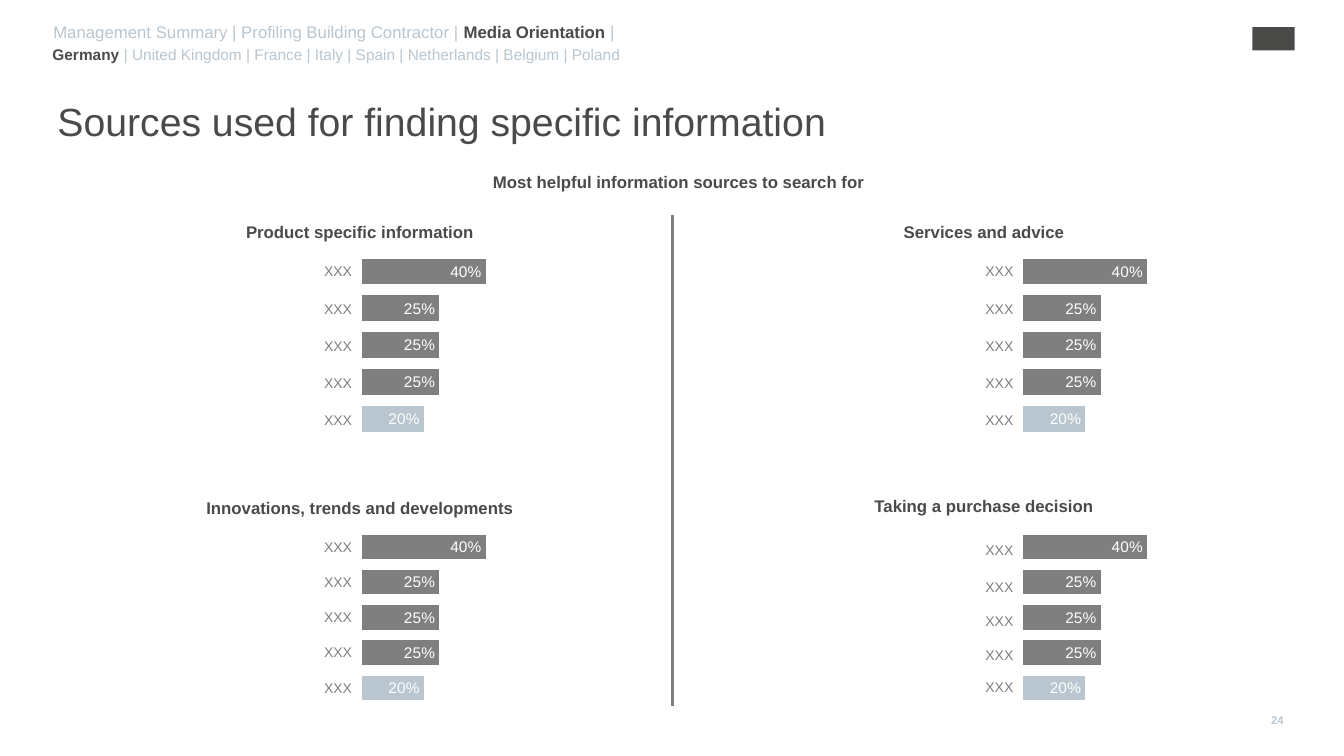
from lxml import etree
from pptx import Presentation
from pptx.chart.data import CategoryChartData
from pptx.dml.color import RGBColor
from pptx.enum.chart import XL_CHART_TYPE as CT, XL_LABEL_POSITION as LabelPos
from pptx.enum.shapes import MSO_CONNECTOR as Conn, MSO_SHAPE as Shape
from pptx.enum.text import MSO_ANCHOR as Anchor, MSO_AUTO_SIZE as AutoSize, PP_ALIGN as Align
from pptx.oxml.ns import qn
from pptx.util import Inches, Pt

DARK = RGBColor(0x4A, 0x4A, 0x49)
GREY = RGBColor(0x7F, 0x7F, 0x7F)
PALE = RGBColor(0xB9, 0xC6, 0xCF)
WHITE = RGBColor(0xFF, 0xFF, 0xFF)

FONT = "Arial"
SHARES = [0.4, 0.25, 0.25, 0.25, 0.2]
BAR_COLORS = [GREY] * 4 + [PALE]
LABEL_GAP = 0.09  # between the label column and the bars

HEADING = dict(size=Pt(12), bold=True, color=DARK)
LABEL = dict(size=Pt(10), color=GREY)
BAR_VALUE = dict(size=Pt(11), color=WHITE)


def format_font(font, color, **values):
    font.name = FONT
    font.color.rgb = color
    for name, value in values.items():
        setattr(font, name, value)


def fill_text(tf, runs, align=Align.LEFT, spacing=None, anchor=Anchor.TOP, margins=(0, 0, 0, 0)):
    """Write one paragraph of (text, format) runs into a text frame."""
    tf.word_wrap = True
    tf.auto_size = AutoSize.NONE
    tf.vertical_anchor = anchor
    for side, margin in zip(("left", "top", "right", "bottom"), margins):
        setattr(tf, f"margin_{side}", Inches(margin))
    p = tf.paragraphs[0]
    p.alignment = align
    p.line_spacing = spacing
    for text, style in runs:
        r = p.add_run()
        r.text = text
        format_font(r.font, **style)


def add_text(slide, box, runs, **layout):
    sp = slide.shapes.add_textbox(*map(Inches, box))
    fill_text(sp.text_frame, runs, **layout)


def add_labels(slide, x, y, w, row_heights):
    """Right-aligned label column, one row per bar."""
    frame = slide.shapes.add_table(len(row_heights), 1, *map(Inches, (x, y, w, sum(row_heights))))
    table = frame.table
    table.first_row = table.horz_banding = False
    for row, height in zip(table.rows, row_heights):
        row.height = Inches(height)
        cell = row.cells[0]
        cell.fill.background()
        cell.vertical_anchor = Anchor.MIDDLE
        cell.margin_left = cell.margin_top = cell.margin_right = Inches(0.01)
        cell.margin_bottom = 0
        p = cell.text_frame.paragraphs[0]
        p.alignment = Align.RIGHT
        r = p.add_run()
        r.text = "XXX"
        format_font(r.font, **LABEL)


def fill_plot_area(chart):
    """Stretch the plot over the whole chart frame."""
    plot_area = chart._chartSpace.chart.plotArea
    for old in plot_area.findall(qn("c:layout")):
        plot_area.remove(old)
    layout = etree.Element(qn("c:layout"))
    manual = etree.SubElement(layout, qn("c:manualLayout"))
    for tag, value in (("layoutTarget", "inner"), ("xMode", "edge"), ("yMode", "edge"),
                       ("x", "0"), ("y", "0"), ("w", "1"), ("h", "1")):
        etree.SubElement(manual, qn(f"c:{tag}")).set("val", value)
    plot_area.insert(0, layout)


def add_bars(slide, x, y, w, h):
    data = CategoryChartData(number_format="0%")
    data.categories = [str(i + 1) for i in range(len(SHARES))]
    data.add_series("Series 1", SHARES)
    chart = slide.shapes.add_chart(CT.BAR_CLUSTERED, *map(Inches, (x, y, w, h)), data).chart
    chart.has_legend = chart.has_title = False
    chart.font.name, chart.font.size = FONT, Pt(10)

    # Hidden axes, first category on top
    chart.category_axis.reverse_order = True
    chart.value_axis.minimum_scale, chart.value_axis.maximum_scale = 0, 1
    chart.value_axis.has_major_gridlines = False
    chart.category_axis.visible = chart.value_axis.visible = False
    fill_plot_area(chart)

    # Bars and their values
    plot = chart.plots[0]
    plot.gap_width = 44
    plot.vary_by_categories = False
    series = plot.series[0]
    series.format.fill.solid()
    series.format.fill.fore_color.rgb = GREY
    for i, color in enumerate(BAR_COLORS):
        fill = series.points[i].format.fill
        fill.solid()
        fill.fore_color.rgb = color
    labels = series.data_labels
    labels.show_value = True
    labels.number_format, labels.number_format_is_linked = "0%", False
    labels.position = LabelPos.INSIDE_END
    format_font(labels.font, **BAR_VALUE)


def add_panel(slide, x, y, heading, heading_y, label_x, label_w, row_heights, bars_h):
    """Heading above a label column and its bars."""
    add_text(slide, (x, heading_y, 5.8, 0.2), [(heading, HEADING)], align=Align.CENTER, spacing=0.9)
    add_labels(slide, x + label_x, y, label_w, row_heights)
    add_bars(slide, x + label_x + label_w + LABEL_GAP, y, 3.07, bars_h)


def add_header(slide):
    """Two navigation lines and a plain mark at the right."""
    pale, strong = dict(color=PALE, bold=False), dict(color=DARK, bold=True)
    big, small = dict(size=Pt(12)), dict(size=Pt(11))
    add_text(slide, (0.43, 0.14, 8.78, 0.37),
             [("Management Summary | Profiling Building Contractor | ", pale | big),
              ("Media Orientation ", strong | big), ("|", pale | big)],
             spacing=0.9, anchor=Anchor.MIDDLE, margins=(0.1, 0.05, 0.1, 0.05))
    add_text(slide, (0.52, 0.48, 11.41, 0.21),
             [("Germany ", strong | small),
              ("| United Kingdom | France | Italy | Spain | Netherlands | Belgium | Poland",
               pale | small)], spacing=0.8)
    mark = slide.shapes.add_shape(Shape.RECTANGLE, *map(Inches, (12.42, 0.27, 0.42, 0.23)))
    mark.shadow.inherit = False
    mark.fill.solid()
    mark.fill.fore_color.rgb = DARK
    mark.line.fill.background()


def add_title(slide):
    sp = slide.shapes.title
    sp.left, sp.top, sp.width, sp.height = map(Inches, (0.57, 0.87, 12.08, 0.72))
    fill_text(sp.text_frame,
              [("Sources used for finding specific information", dict(size=Pt(28), color=DARK))],
              spacing=0.9, anchor=Anchor.MIDDLE)
    add_text(slide, (0.67, 1.65, 12.17, 0.3),
             [("Most helpful information sources to search for ", HEADING)],
             align=Align.CENTER, margins=(0.1, 0.05, 0.1, 0.05))


def add_divider(slide, x, top, bottom):
    line = slide.shapes.add_connector(Conn.STRAIGHT, *map(Inches, (x, top, x, bottom)))
    line.line.color.rgb = GREY
    line.line.width = Pt(1.5)
    etree.SubElement(line._element.spPr, qn("a:effectLst"))


def main():
    prs = Presentation()
    prs.slide_width, prs.slide_height = Inches(13.33), Inches(7.5)
    slide = prs.slides.add_slide(prs.slide_layouts[5])

    add_header(slide)
    add_title(slide)

    # Four panels, two on each side of the divider
    left = dict(x=0.67, label_x=0.53, label_w=2.3)
    right = dict(x=6.86, label_x=0.67, label_w=2.53)
    upper = dict(y=2.51, row_heights=[0.37] * 5, bars_h=1.83)
    lower = dict(y=5.25, bars_h=1.75)
    add_panel(slide, heading="Product specific information", heading_y=2.22, **left, **upper)
    add_panel(slide, heading="Services and advice", heading_y=2.22, **right, **upper)
    add_panel(slide, heading="Innovations, trends and developments", heading_y=4.96,
              row_heights=[0.35] * 5, **left, **lower)
    add_panel(slide, heading="Taking a purchase decision", heading_y=4.94,
              row_heights=[0.41, 0.33, 0.35, 0.32, 0.32], **right, **lower)
    add_divider(slide, 6.67, 2.13, 7)

    # Page number
    add_text(slide, (12.55, 7.07, 0.24, 0.15), [("24", dict(size=Pt(8), bold=True, color=PALE))],
             align=Align.CENTER, anchor=Anchor.MIDDLE)
    prs.save("out.pptx")


if __name__ == "__main__":
    main()
